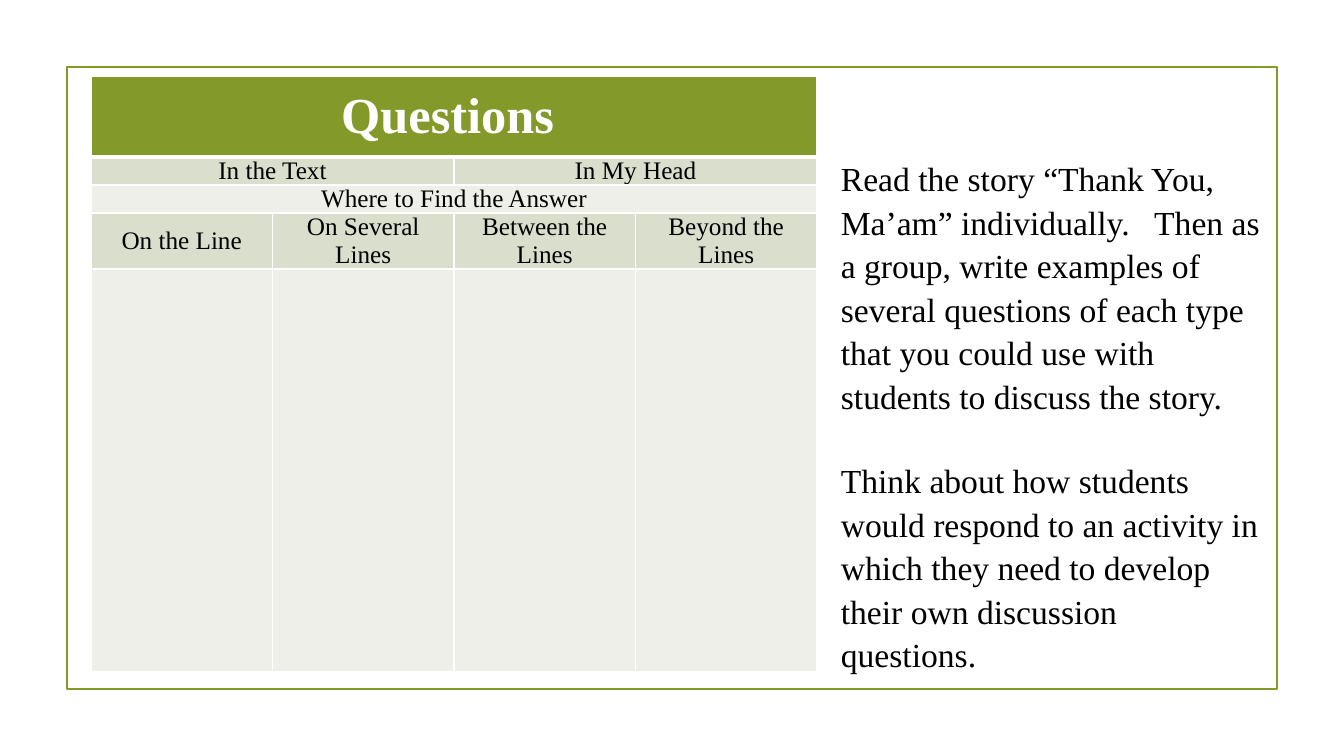
import dataclasses

import pptx
import pptx.dml.color
import pptx.enum.shapes
import pptx.enum.text
import pptx.oxml
import pptx.oxml.ns
import pptx.util

EMU_PER_PX = 914400 / 100.8
FONT = "Times New Roman"
WHITE, BLACK, GREEN = "FFFFFF", "000000", "83992A"
SAGE, PALE = "D9DECD", "EDEFE8"

COLUMN_COUNT = 4
TABLE_WIDTH = 726
INSTRUCTIONS = [
    "Read the story “Thank You, Ma’am” individually.   Then as a group, write examples of "
    "several questions of each type that you could use with students to discuss the story.",
    "Think about how students would respond to an activity in which they need to develop "
    "their own discussion questions.",
]


@dataclasses.dataclass
class QuestionRow:
    """A table row whose labels share the columns equally."""
    height: int
    fill: str
    labels: list[str]
    size: int = 18
    color: str = BLACK
    bold: bool = False
    top_border: float = 1
    bottom_border: float = 1


ROWS = [
    QuestionRow(81, GREEN, ["Questions "], size=36, color=WHITE, bold=True, bottom_border=3),
    QuestionRow(28, SAGE, ["In the Text", "In My Head"], top_border=3),
    QuestionRow(28, PALE, ["Where to Find the Answer"]),
    QuestionRow(56, SAGE, ["On the Line", "On Several Lines", "Between the Lines",
                           "Beyond the Lines"]),
    QuestionRow(403, PALE, [""] * COLUMN_COUNT),
]


def px(length: float) -> int:
    return round(length * EMU_PER_PX)


def rgb(color: str) -> pptx.dml.color.RGBColor:
    return pptx.dml.color.RGBColor.from_string(color)


def write_text(text_frame, paragraphs: list[str], *, size: float, color: str = BLACK,
               bold: bool = False, align=pptx.enum.text.PP_ALIGN.LEFT,
               line_spacing: float = 1.0, gap: float = 0) -> None:
    """Fill a text frame; gap is the space in points between paragraphs."""
    for index, text in enumerate(paragraphs):
        paragraph = text_frame.add_paragraph() if index else text_frame.paragraphs[0]
        paragraph.alignment = align
        paragraph.line_spacing = line_spacing
        paragraph.space_before = pptx.util.Pt(gap if index else 0)
        if not text:
            continue
        run = paragraph.add_run()
        run.text = text
        run.font.name = FONT
        run.font.size = pptx.util.Pt(size)
        run.font.bold = bold
        run.font.color.rgb = rgb(color)


def set_borders(cell, top: float, bottom: float) -> None:
    properties = cell._tc.get_or_add_tcPr()
    widths = {"lnL": 1, "lnR": 1, "lnT": top, "lnB": bottom}
    for position, (side, width) in enumerate(widths.items()):
        properties.insert(position, pptx.oxml.parse_xml(
            f'<a:{side} {pptx.oxml.ns.nsdecls("a")} w="{pptx.util.Pt(width)}">'
            f'<a:solidFill><a:srgbClr val="{WHITE}"/></a:solidFill></a:{side}>'))


def add_frame(slide) -> None:
    frame = slide.shapes.add_shape(pptx.enum.shapes.MSO_SHAPE.RECTANGLE,
                                   px(67), px(67), px(1210), px(622))
    frame.shadow.inherit = False
    frame.fill.background()
    frame.line.color.rgb = rgb(GREEN)
    frame.line.width = pptx.util.Pt(1.25)


def add_question_table(slide) -> None:
    table = slide.shapes.add_table(
        len(ROWS), COLUMN_COUNT, px(91), px(76), px(TABLE_WIDTH),
        px(sum(row.height for row in ROWS))).table
    for column in table.columns:
        column.width = px(TABLE_WIDTH / COLUMN_COUNT)
    for row_index, row in enumerate(ROWS):
        table.rows[row_index].height = px(row.height)
        for column_index in range(COLUMN_COUNT):
            cell = table.cell(row_index, column_index)
            cell.fill.solid()
            cell.fill.fore_color.rgb = rgb(row.fill)
            set_borders(cell, row.top_border, row.bottom_border)
            cell.margin_left = cell.margin_right = px(8)
            cell.margin_top = cell.margin_bottom = 0
            cell.vertical_anchor = pptx.enum.text.MSO_ANCHOR.MIDDLE
        span = COLUMN_COUNT // len(row.labels)
        for label_index, label in enumerate(row.labels):
            first = label_index * span
            cell = table.cell(row_index, first)
            if span > 1:
                cell.merge(table.cell(row_index, first + span - 1))
            write_text(cell.text_frame, [label], size=row.size, color=row.color,
                       bold=row.bold, align=pptx.enum.text.PP_ALIGN.CENTER)


def add_instructions(slide) -> None:
    box = slide.shapes.add_textbox(px(831), px(150), px(439), px(458))
    box.text_frame.word_wrap = True
    write_text(box.text_frame, INSTRUCTIONS, size=24, line_spacing=1.08, gap=29)


def main() -> None:
    presentation = pptx.Presentation()
    presentation.slide_width = px(1344)
    presentation.slide_height = px(756)
    slide = presentation.slides.add_slide(presentation.slide_layouts[6])
    add_frame(slide)
    add_question_table(slide)
    add_instructions(slide)
    presentation.save("out.pptx")


if __name__ == "__main__":
    main()
